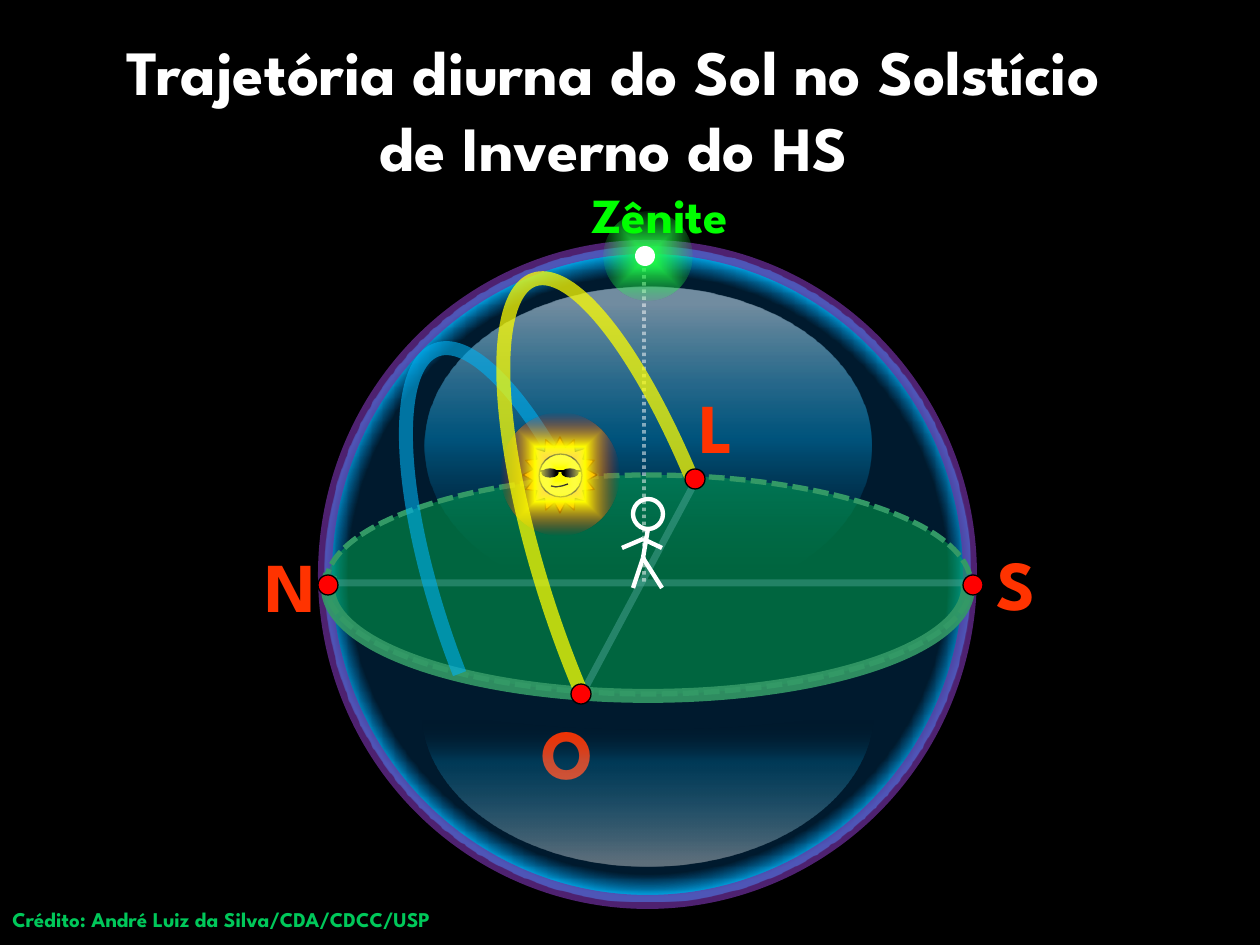
from lxml.etree import SubElement
from pptx import Presentation
from pptx.dml.color import RGBColor
from pptx.enum.dml import MSO_LINE
from pptx.enum.shapes import MSO_CONNECTOR, MSO_SHAPE
from pptx.enum.text import MSO_ANCHOR, PP_ALIGN
from pptx.oxml.ns import qn
from pptx.util import Emu, Pt

SCALE = 914400 / 126
COLORS = {
    "black": "000000", "white": "FFFFFF", "credit": "00C85A", "letter": "FF3300",
    "sky": "00B0F0", "blue": "0070C0", "purple": "7030A0", "axis": "A5A5E9",
    "ground": "00B050", "rim": "339966", "red": "FF0000", "gold": "FFC000",
    "yellow": "FFFF00", "glow": "21FF46", "zenith": "00FF00",
}
RGB = {name: RGBColor.from_string(value) for name, value in COLORS.items()}

deck = Presentation()
deck.slide_width, deck.slide_height = Emu(round(1260 * SCALE)), Emu(round(945 * SCALE))
page = deck.slides.add_slide(deck.slide_layouts[6])
page.background.fill.solid()
page.background.fill.fore_color.rgb = RGB["black"]


def draw(kind, at, fill=None, line=None, dash=None, alpha=100, fill_alpha=100,
         turn=0, adjust=(), path=None, angle=0):
    place = [Emu(round(value * SCALE)) for value in at]
    if kind is None:
        shape = page.shapes.add_connector(MSO_CONNECTOR.STRAIGHT, *place)
    else:
        shape = page.shapes.add_shape(kind, *place)
        shape.rotation = turn
        shape.shadow.inherit = False
        for index, value in enumerate(adjust):
            shape.adjustments[index] = value
    properties = shape._element.spPr
    if isinstance(fill, list):
        shape.fill.gradient()
        gradient = properties.find(qn("a:gradFill"))
        gradient.clear()
        gradient.set("rotWithShape", "1")
        stops = SubElement(gradient, qn("a:gsLst"))
        for position, color, opacity in fill:
            stop = SubElement(stops, qn("a:gs"), pos=str(position * 1000))
            tone = SubElement(stop, qn("a:srgbClr"), val=COLORS[color])
            SubElement(tone, qn("a:alpha"), val=str(opacity * 1000))
        if path:
            focus = SubElement(gradient, qn("a:path"), path=path)
            SubElement(focus, qn("a:fillToRect"), l="50000", t="50000", r="50000", b="50000")
        else:
            SubElement(gradient, qn("a:lin"), ang=str(angle * 60000), scaled="1")
    elif fill:
        shape.fill.solid()
        shape.fill.fore_color.rgb = RGB[fill]
        tone = properties.find(qn("a:solidFill"))[0]
        SubElement(tone, qn("a:alpha"), val=str(fill_alpha * 1000))
    elif kind is not None:
        shape.fill.background()
    if line:
        color, width = line
        shape.line.color.rgb = RGB[color]
        shape.line.width = Pt(width)
        if dash:
            shape.line.dash_style = dash
        tone = properties.find(qn("a:ln")).find(qn("a:solidFill"))[0]
        SubElement(tone, qn("a:alpha"), val=str(alpha * 1000))
    else:
        shape.line.fill.background()
    if kind is None:
        SubElement(properties, qn("a:effectLst"))


def write(words, at, size, color, align=PP_ALIGN.LEFT, anchor=MSO_ANCHOR.TOP, wrap=True):
    box = page.shapes.add_textbox(*[Emu(round(value * SCALE)) for value in at])
    frame = {"word_wrap": wrap, "vertical_anchor": anchor}
    for name, value in frame.items():
        setattr(box.text_frame, name, value)
    para = box.text_frame.paragraphs[0]
    para.alignment = align
    span = para.add_run()
    span.text = words
    font = {"name": "League Spartan", "size": Pt(size), "bold": True}
    for name, value in font.items():
        setattr(span.font, name, value)
    span.font.color.rgb = RGB[color]


OVAL, ARC = MSO_SHAPE.OVAL, MSO_SHAPE.ARC
THIN = ("black", 0.75)

write("Trajetória diurna do Sol no Solstício de Inverno do HS", (78, 29, 1071, 158),
      36, "white", PP_ALIGN.CENTER, MSO_ANCHOR.MIDDLE)
write("Crédito: André Luiz da Silva/CDA/CDCC/USP", (0, 900, 1260, 38), 12, "credit")

draw(OVAL, (425, 287, 446, 318), angle=90,
     fill=[(6, "white", 58), (48, "sky", 42), (91, "black", 10)])
draw(OVAL, (325, 247, 645, 655), path="circle", line=("purple", 8), alpha=70,
     fill=[(65, "blue", 24), (70, "sky", 100)])

draw(None, (581, 696, 699, 475), line=("axis", 4), alpha=45)
for letter, left, top in [("O", 529, 703), ("N", 253, 536), ("L", 687, 377), ("S", 984, 534)]:
    write(letter, (left, top, 49, 97), 40, "letter", wrap=False)
draw(None, (331, 583, 977, 583), line=("axis", 4), alpha=42)
draw(OVAL, (326, 475, 645, 219), fill="ground", fill_alpha=50,
     line=("rim", 3), dash=MSO_LINE.SQUARE_DOT)
draw(ARC, (328, 479, 640, 217), line=("rim", 8), alpha=90, adjust=(215.6, 109.4))

draw(OVAL, (633, 499, 30, 30), line=("white", 2.5))
for limb in [(648, 529, 643, 558), (643, 558, 662, 588), (643, 558, 633, 588),
             (643, 539, 662, 548), (622, 548, 643, 539)]:
    draw(None, limb, line=("white", 2.5))

for left in (318, 963):
    draw(OVAL, (left, 575, 20, 20), fill="red", line=THIN)
draw(MSO_SHAPE.MOON, (570, 563, 155, 451), turn=270, adjust=(0.875,),
     fill=[(3, "white", 37), (68, "sky", 20), (94, "black", 0)])
draw(None, (644, 247, 644, 585), line=("white", 2), dash=MSO_LINE.ROUND_DOT, alpha=50)
draw(ARC, (445, 333, 176, 572), line=("sky", 8), alpha=60, turn=160.3, adjust=(205.83, 74.18))

draw(MSO_SHAPE.STAR_16_POINT, (523, 437, 74, 76), fill="gold", line=THIN, adjust=(0.375,))
draw(OVAL, (539, 454, 43, 43), fill="yellow", line=THIN)
builder = page.shapes.build_freeform(551, 486, scale=SCALE)
builder.add_line_segments([(556, 487), (562, 486), (568, 484)], close=False)
mouth = builder.convert_to_shape()
mouth.fill.background()
mouth.line.color.rgb = RGB["black"]
mouth.line.width = Pt(0.75)
mouth.shadow.inherit = False
for left in (542, 562):
    draw(OVAL, (left, 469, 16, 8), fill="black", line=THIN)
draw(None, (539, 471, 582, 471), line=THIN)
draw(OVAL, (501, 413, 118, 123), path="shape",
     fill=[(7, "white", 0), (42, "yellow", 100), (100, "red", 0)])

draw(ARC, (546, 263, 179, 640), line=("yellow", 8), alpha=72, turn=161.5, adjust=(189.76, 82.06))
for left, top in [(685, 469), (571, 684)]:
    draw(OVAL, (left, top, 20, 20), fill="red", line=THIN)

draw(OVAL, (604, 212, 88, 88), path="shape", turn=305.7,
     fill=[(7, "glow", 100), (77, "glow", 2)])
draw(OVAL, (635, 246, 20, 20), fill="white")
write("Zênite", (551, 178, 217, 72), 28, "zenith", PP_ALIGN.CENTER)

deck.save("out.pptx")
